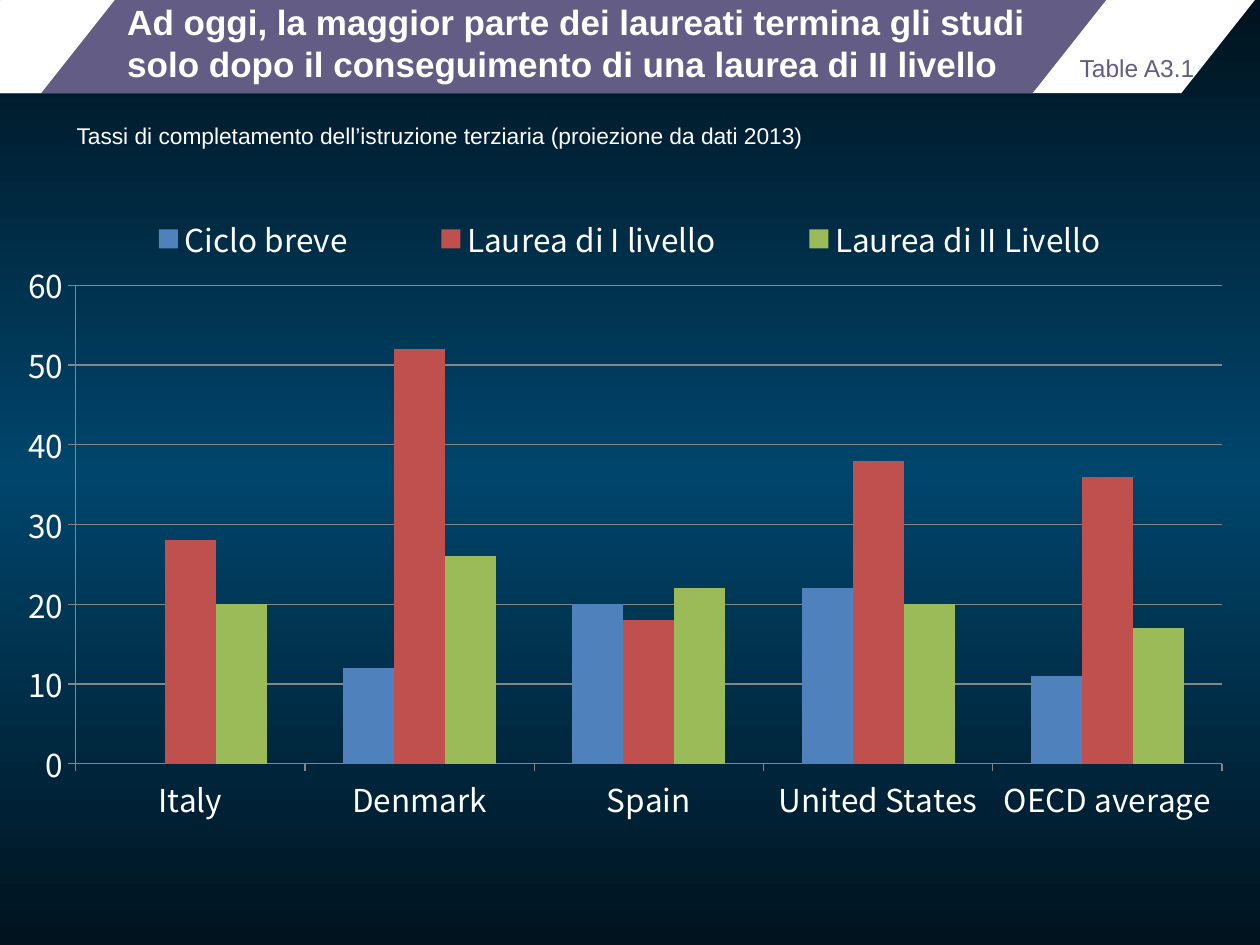
from dataclasses import dataclass

from copy import deepcopy
from lxml.etree import SubElement
from pptx import Presentation
from pptx.chart.data import CategoryChartData
from pptx.dml.color import RGBColor
from pptx.enum.chart import XL_CHART_TYPE, XL_LEGEND_POSITION, XL_TICK_MARK
from pptx.enum.shapes import MSO_SHAPE
from pptx.enum.text import MSO_ANCHOR, MSO_AUTO_SIZE, PP_ALIGN
from pptx.oxml.ns import qn
from pptx.util import Inches, Pt


@dataclass(frozen=True)
class Theme:
    white: str = "FFFFFF"
    purple: str = "635C85"
    axis: str = "868686"
    night: str = "00131E"
    sea: str = "00456C"
    series: tuple = ("4F81BD", "C0504D", "9BBB59")
    text_font: str = "Arial"
    chart_font: str = "Noto Sans CJK KR"
    title_size: int = 20
    reference_size: int = 14
    subtitle_size: int = 13
    chart_size: int = 18


THEME = Theme()
WIDTH, HEIGHT = 10, 7.5
COUNTRIES = ("Italy", "Denmark", "Spain", "United States", "OECD average")
COMPLETION_RATES = {
    "Ciclo breve": (0, 12, 20, 22, 11),
    "Laurea di I livello": (28, 52, 18, 38, 36),
    "Laurea di II Livello": (20, 26, 22, 20, 17),
}


def box(left, top, width, height):
    """Turn inches into the four lengths that a shape takes."""
    return tuple(Inches(length) for length in (left, top, width, height))


def assign(target, values):
    for name, value in values.items():
        setattr(target, name, value)


def style_font(font, size, colour, family=THEME.text_font, bold=False):
    assign(font, {"size": Pt(size), "name": family, "bold": bold})
    font.color.rgb = RGBColor.from_string(colour)


def write(holder, wording, size, colour, anchor=MSO_ANCHOR.TOP, bold=False):
    frame = holder.text_frame
    assign(frame, {"text": wording, "word_wrap": True, "vertical_anchor": anchor,
                   "auto_size": MSO_AUTO_SIZE.NONE})
    paragraph = frame.paragraphs[0]
    paragraph.alignment = PP_ALIGN.LEFT
    style_font(paragraph.runs[0].font, size, colour, bold=bold)


def paint_background(slide):
    fill = slide.background.fill
    fill.gradient()
    fill.gradient_angle = 90
    stop_list = slide.element.find(".//" + qn("a:gsLst"))
    stop_list.append(deepcopy(stop_list[-1]))
    colours = (THEME.night, THEME.sea, THEME.night)
    for stop, position, colour in zip(fill.gradient_stops, (0, 0.5, 1), colours):
        stop.position = position
        stop.color.rgb = RGBColor.from_string(colour)


def add_banner(slide, height):
    """Slanted bands across the top, with the title and table reference."""
    bands = ((-0.2, 10.16, THEME.white), (-0.59, 9.37, THEME.purple),
             (-0.58, 1.49, THEME.white))
    for left, width, colour in bands:
        band = slide.shapes.add_shape(MSO_SHAPE.PARALLELOGRAM, *box(left, 0, width, height))
        band.adjustments[0] = 0.79
        band.shadow.inherit = False
        band.fill.solid()
        band.fill.fore_color.rgb = RGBColor.from_string(colour)
        band.line.fill.background()

    title = slide.shapes.title
    left, top, width, title_height = box(0.91, 0, 7.4, 0.68)
    assign(title, {"left": left, "top": top, "width": width, "height": title_height})
    write(title, "Ad oggi, la maggior parte dei laureati termina gli studi "
          "solo dopo il conseguimento di una laurea di II livello",
          THEME.title_size, THEME.white, MSO_ANCHOR.MIDDLE, bold=True)
    slide.shapes.element.append(title.element)  # in front of the bands

    reference = slide.shapes.add_textbox(*box(8.47, height / 2, 1.18, height / 2))
    write(reference, "Table A3.1", THEME.reference_size, THEME.purple)


def add_subtitle(slide, area):
    write(slide.shapes.add_textbox(*area),
          "Tassi di completamento dell’istruzione terziaria (proiezione da dati 2013)",
          THEME.subtitle_size, THEME.white)


def set_layout(part, after, shares, inner=False):
    """Place a chart part by shares of the chart's width and height."""
    for old in part.findall(qn("c:layout")):
        part.remove(old)
    layout = SubElement(part, qn("c:layout"))
    if after is None:
        part.insert(0, layout)
    else:
        part.find(qn(after)).addnext(layout)
    manual = SubElement(layout, qn("c:manualLayout"))
    settings = {"layoutTarget": "inner"} if inner else {}
    settings |= {"xMode": "edge", "yMode": "edge"} | dict(zip("xywh", shares))
    for name, value in settings.items():
        SubElement(manual, qn("c:" + name)).set("val", str(value))


def style_axes(chart):
    axis_colour = RGBColor.from_string(THEME.axis)
    rates = chart.value_axis
    assign(rates, {"minimum_scale": 0, "maximum_scale": 60, "major_unit": 10,
                   "has_major_gridlines": True})
    assign(rates.tick_labels, {"number_format": "0", "number_format_is_linked": False})
    for axis in (chart.category_axis, rates):
        assign(axis, {"major_tick_mark": XL_TICK_MARK.OUTSIDE,
                      "minor_tick_mark": XL_TICK_MARK.NONE})
    for edge in (chart.category_axis.format.line, rates.format.line,
                 rates.major_gridlines.format.line):
        edge.color.rgb = axis_colour
        edge.width = Pt(0.75)


def add_completion_chart(slide, area):
    rates = CategoryChartData(number_format="0")
    rates.categories = COUNTRIES
    for degree, values in COMPLETION_RATES.items():
        rates.add_series(degree, values)
    chart = slide.shapes.add_chart(XL_CHART_TYPE.COLUMN_CLUSTERED, *area, rates).chart
    assign(chart, {"has_title": False, "has_legend": True})
    style_font(chart.font, THEME.chart_size, THEME.white, THEME.chart_font)
    assign(chart.legend, {"position": XL_LEGEND_POSITION.RIGHT, "include_in_layout": False})
    assign(chart.plots[0], {"gap_width": 150, "overlap": 0, "vary_by_categories": False})
    for degree, colour in zip(chart.plots[0].series, THEME.series):
        degree.format.fill.solid()
        degree.format.fill.fore_color.rgb = RGBColor.from_string(colour)
    style_axes(chart)

    plot_area = chart.element.find(".//" + qn("c:plotArea"))
    set_layout(plot_area, None, (0.06, 0.14, 0.91, 0.67), inner=True)
    legend = chart.element.find(".//" + qn("c:legend"))
    set_layout(legend, "c:legendPos", (0.06, 0.03, 0.88, 0.09))


def main():
    deck = Presentation()
    assign(deck, {"slide_width": Inches(WIDTH), "slide_height": Inches(HEIGHT)})
    slide = deck.slides.add_slide(deck.slide_layouts[5])
    paint_background(slide)
    add_banner(slide, 0.74)
    add_subtitle(slide, box(0.51, 0.92, 9.44, 0.39))
    add_completion_chart(slide, box(0, 1.47, WIDTH, 5.67))
    deck.save("out.pptx")


if __name__ == "__main__":
    main()
